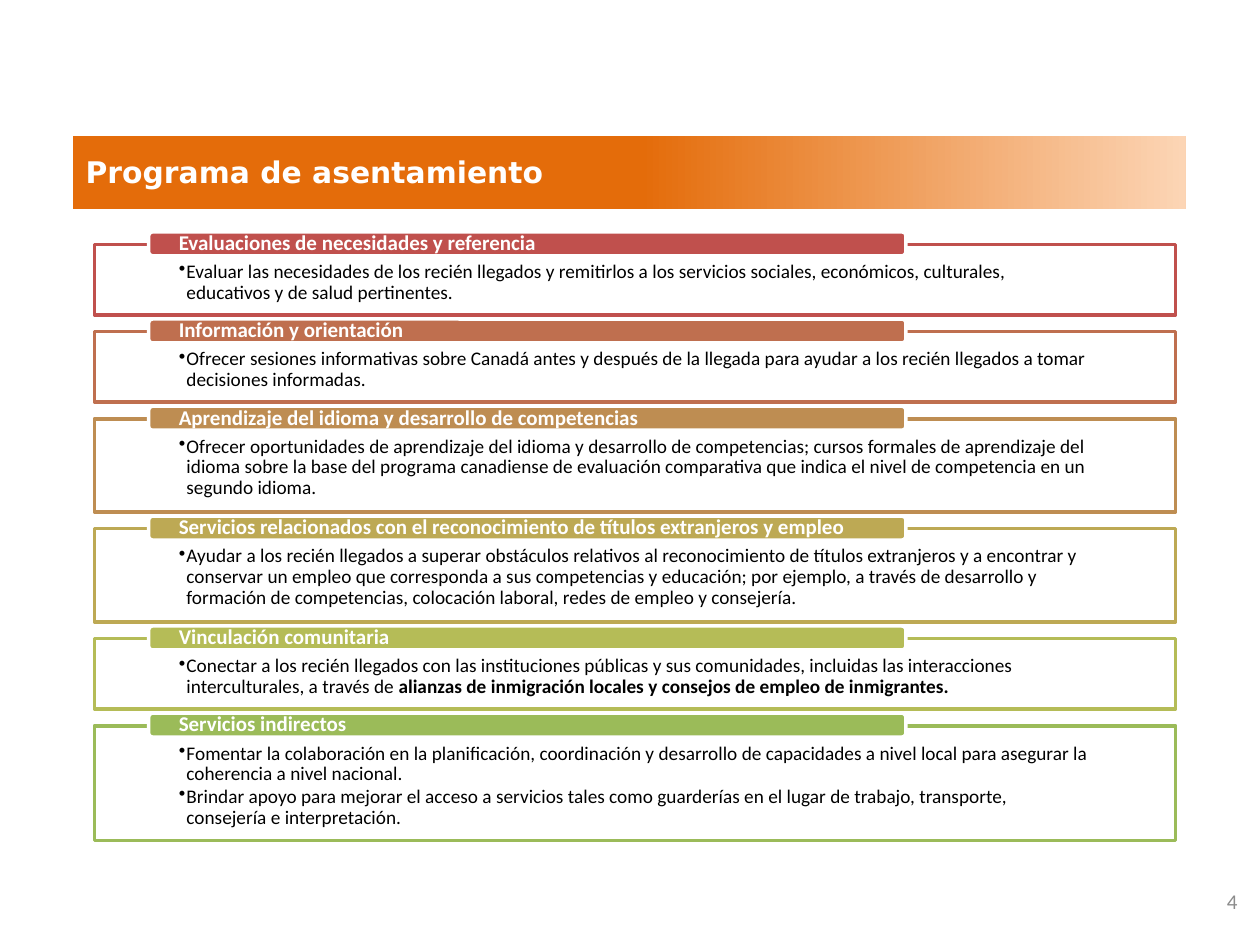
from dataclasses import dataclass

from lxml.etree import SubElement
from pptx import Presentation
from pptx.dml.color import RGBColor
from pptx.enum.shapes import MSO_SHAPE
from pptx.enum.text import MSO_ANCHOR, PP_ALIGN
from pptx.oxml.ns import qn
from pptx.util import Inches, Pt


@dataclass(frozen=True)
class Theme:
    title_font: str = "DejaVu Sans"
    body_font: str = "Calibri"
    title_size: int = 17
    heading_size: int = 12
    body_size: int = 11
    number_size: int = 12
    line_width: int = 2
    band_start: str = "E46C0A"
    band_end: str = "FCD5B5"
    white: str = "FFFFFF"
    black: str = "000000"
    gray: str = "8C8C8C"


theme = Theme()

# Heading, colour, box height in rows, bullets as (regular text, bold ending)
SECTIONS = [
    ("Evaluaciones de necesidades y referencia", "C0504D", 5.6, [
        ("Evaluar las necesidades de los recién llegados y remitirlos a los servicios "
         "sociales, económicos, culturales, educativos y de salud pertinentes.", "")]),
    ("Información y orientación", "BF6F4F", 5.6, [
        ("Ofrecer sesiones informativas sobre Canadá antes y después de la llegada para "
         "ayudar a los recién llegados a tomar decisiones informadas.", "")]),
    ("Aprendizaje del idioma y desarrollo de competencias", "BE8D52", 7.4, [
        ("Ofrecer oportunidades de aprendizaje del idioma y desarrollo de competencias; "
         "cursos formales de aprendizaje del idioma sobre la base del programa canadiense "
         "de evaluación comparativa que indica el nivel de competencia en un segundo "
         "idioma.", "")]),
    ("Servicios relacionados con el reconocimiento de títulos extranjeros y empleo",
     "BDA954", 7.4, [
        ("Ayudar a los recién llegados a superar obstáculos relativos al reconocimiento de "
         "títulos extranjeros y a encontrar y conservar un empleo que corresponda a sus "
         "competencias y educación; por ejemplo, a través de desarrollo y formación de "
         "competencias, colocación laboral, redes de empleo y consejería.", "")]),
    ("Vinculación comunitaria", "B5BC57", 5.6, [
        ("Conectar a los recién llegados con las instituciones públicas y sus comunidades, "
         "incluidas las interacciones interculturales, a través de ",
         "alianzas de inmigración locales y consejos de empleo de inmigrantes.")]),
    ("Servicios indirectos", "9BBB59", 9.1, [
        ("Fomentar la colaboración en la planificación, coordinación y desarrollo de "
         "capacidades a nivel local para asegurar la coherencia a nivel nacional.", ""),
        ("Brindar apoyo para mejorar el acceso a servicios tales como guarderías en el "
         "lugar de trabajo, transporte, consejería e interpretación.", "")]),
]

deck = Presentation()
deck.slide_width, deck.slide_height = Inches(10), Inches(7.5)
page = deck.slides.add_slide(deck.slide_layouts[5])

# Grid of 100 columns and 75 rows
COLUMN, ROW = deck.slide_width / 100, deck.slide_height / 75


def area(left, top, width, height):
    return [round(n) for n in (left * COLUMN, top * ROW, width * COLUMN, height * ROW)]


def add_block(kind, place, fill, line, insets, anchor):
    block = page.shapes.add_shape(kind, *area(*place))
    block.shadow.inherit = False
    block.fill.solid()
    block.fill.fore_color.rgb = RGBColor.from_string(fill)
    block.line.color.rgb = RGBColor.from_string(line)
    block.line.width = Pt(theme.line_width)
    frame = block.text_frame
    frame.word_wrap = True
    frame.vertical_anchor = anchor
    side, frame.margin_top, frame.margin_bottom = [Inches(n) for n in insets]
    frame.margin_left = frame.margin_right = side
    return block


# Gradient band, placed behind the title
band = page.shapes.add_shape(MSO_SHAPE.RECTANGLE, *area(5.8, 10.8, 88.3, 5.8))
band.shadow.inherit = False
band.line.fill.background()
band.fill.gradient()
band.fill.gradient_angle = 0
stops = zip(band.fill.gradient_stops, (0.51, 1), (theme.band_start, theme.band_end))
for stop, position, color in stops:
    stop.position = position
    stop.color.rgb = RGBColor.from_string(color)
page.shapes.title._element.addprevious(band._element)

# Title
title = page.shapes.title
title.left, title.top, title.width, title.height = area(5.8, 10.3, 89.2, 6.7)
title.text_frame.text = "Programa de asentamiento"
title.text_frame.vertical_anchor = MSO_ANCHOR.MIDDLE
para = title.text_frame.paragraphs[0]
para.alignment = PP_ALIGN.LEFT
para.font.name = theme.title_font
para.font.size = Pt(theme.title_size)
para.font.bold = True
para.font.color.rgb = RGBColor.from_string(theme.white)

# Stacked sections: a bordered box with a heading tab on its top edge
GAP, TAB_RISE = 1.32, 1
top = 19.4
for heading, color, height, bullets in SECTIONS:
    box = add_block(MSO_SHAPE.RECTANGLE, (7.5, top, 85.8, height), theme.white, color,
                    (0.67, 0.14, 0.09), MSO_ANCHOR.TOP)
    fill_color = box.fill._xPr.find(qn("a:solidFill"))[0]
    SubElement(fill_color, qn("a:alpha"), val="90000")
    for index, (regular, bold) in enumerate(bullets):
        frame = box.text_frame
        para = frame.add_paragraph() if index else frame.paragraphs[0]
        para.level = 1
        para.alignment = PP_ALIGN.LEFT
        para.line_spacing = 0.9
        para.space_after = Pt(1)
        properties = para._p.get_or_add_pPr()
        properties.set("marL", str(Inches(0.06)))
        properties.set("indent", str(Inches(-0.06)))
        SubElement(properties, qn("a:buChar"), char="•")
        para.font.name = theme.body_font
        para.font.size = Pt(theme.body_size)
        para.font.color.rgb = RGBColor.from_string(theme.black)
        para.add_run().text = regular
        if bold:
            span = para.add_run()
            span.text = bold
            span.font.bold = True

    tab = add_block(MSO_SHAPE.ROUNDED_RECTANGLE, (11.8, top - TAB_RISE, 60.1, 1.9),
                    color, theme.white, (0.23, 0, 0), MSO_ANCHOR.MIDDLE)
    para = tab.text_frame.paragraphs[0]
    para.text = heading
    para.alignment = PP_ALIGN.LEFT
    para.line_spacing = 0.9
    para.font.name = theme.body_font
    para.font.size = Pt(theme.heading_size)
    para.font.bold = True
    para.font.color.rgb = RGBColor.from_string(theme.white)
    top += height + GAP

# Page number
number = page.shapes.add_textbox(*area(90, 69.5, 9.2, 4))
number.text_frame.word_wrap = True
number.text_frame.vertical_anchor = MSO_ANCHOR.MIDDLE
para = number.text_frame.paragraphs[0]
para.text = "4"
para.alignment = PP_ALIGN.RIGHT
para.font.name = theme.body_font
para.font.size = Pt(theme.number_size)
para.font.color.rgb = RGBColor.from_string(theme.gray)

deck.save("out.pptx")
